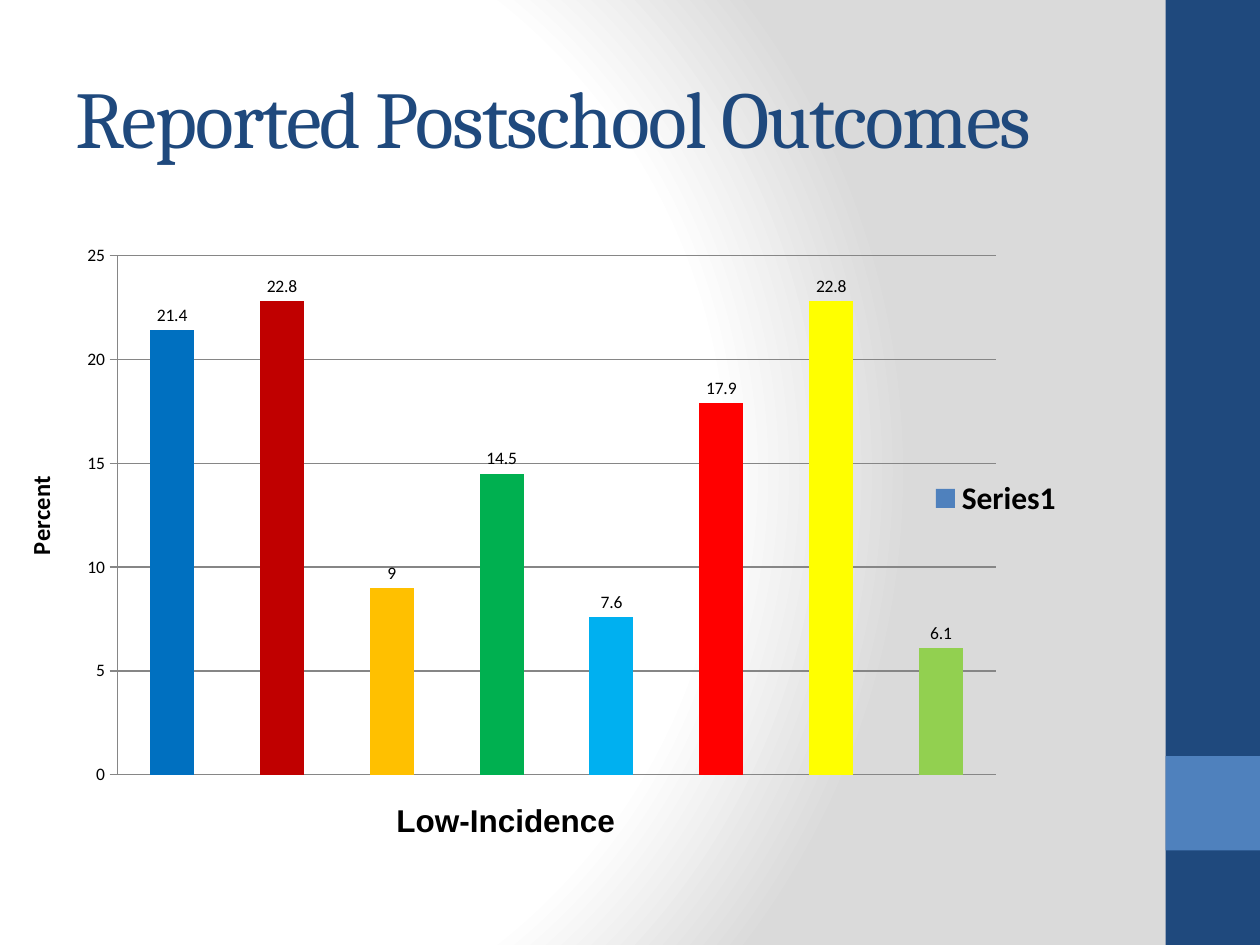
from lxml import etree
from pptx import Presentation
from pptx.chart.data import CategoryChartData
from pptx.dml.color import RGBColor
from pptx.enum.chart import XL_CHART_TYPE as ChartType, XL_LABEL_POSITION as LabelPosition
from pptx.enum.chart import XL_LEGEND_POSITION as LegendPosition, XL_TICK_MARK as TickMark
from pptx.enum.shapes import MSO_SHAPE
from pptx.enum.text import MSO_ANCHOR, PP_ALIGN
from pptx.oxml import parse_xml
from pptx.oxml.ns import nsdecls, qn
from pptx.util import Inches, Pt

COLORS = {"navy": "1F497D", "blue": "4F81BD", "black": "000000", "grid": "868686"}
OUTCOMES = [(21.4, "0070C0"), (22.8, "C00000"), (9, "FFC000"), (14.5, "00B050"),
            (7.6, "00B0F0"), (17.9, "FF0000"), (22.8, "FFFF00"), (6.1, "92D050")]


def style_font(font, color, **values):
    font.color.rgb = RGBColor.from_string(COLORS[color])
    for name, value in values.items():
        setattr(font, name, value)


def place_part(part, index, **fractions):
    """Give a chart part a manual layout in fractions of the chart area."""
    for old in part.findall(qn("c:layout")):
        part.remove(old)
    layout = parse_xml(f"<c:layout {nsdecls('c')}><c:manualLayout/></c:layout>")
    for tag, value in fractions.items():
        etree.SubElement(layout[0], qn(f"c:{tag}")).set("val", str(value))
    part.insert(index, layout)


deck = Presentation()
deck.slide_width, deck.slide_height = Inches(10), Inches(7.5)
page = deck.slides.add_slide(deck.slide_layouts[5])

# Background: circular gradient, white to grey
background = page.background.fill
background.gradient()
gradient = page.background._cSld.find(f".//{qn('a:gradFill')}")
stops = "".join(f'<a:gs pos="{position}"><a:srgbClr val="{color}"/></a:gs>'
                for position, color in [(0, "FFFFFF"), (75000, "FFFFFF"), (100000, "DADADA")])
gradient.getparent().replace(gradient, parse_xml(
    f'<a:gradFill {nsdecls("a")} rotWithShape="1"><a:gsLst>{stops}</a:gsLst>'
    '<a:path path="circle"><a:fillToRect l="20000" t="50000" r="100000" b="50000"/></a:path>'
    "</a:gradFill>"))

# Right-hand band and its accent square
for top, height, color in [(0, 7.5, "navy"), (6, 0.75, "blue")]:
    band = page.shapes.add_shape(MSO_SHAPE.RECTANGLE, Inches(9.25), Inches(top),
                                 Inches(0.75), Inches(height))
    band.shadow.inherit = False
    band.fill.solid()
    band.fill.fore_color.rgb = RGBColor.from_string(COLORS[color])
    band.line.fill.background()

# Title
title = page.shapes.title
title.left, title.top, title.width, title.height = map(Inches, (0.5, 0.3, 8.33, 1.25))
title.text_frame.vertical_anchor = MSO_ANCHOR.MIDDLE
para = title.text_frame.paragraphs[0]
para.alignment = PP_ALIGN.LEFT
span = para.add_run()
span.text = "Reported Postschool Outcomes"
style_font(span.font, "navy", name="Cambria", size=Pt(46))
span.font._element.set("spc", "-100")

# Column chart
data = CategoryChartData()
data.categories = [str(number) for number in range(1, len(OUTCOMES) + 1)]
data.add_series("Series1", [value for value, _ in OUTCOMES])
chart = page.shapes.add_chart(ChartType.COLUMN_CLUSTERED, Inches(0), Inches(1.85),
                              Inches(9.3), Inches(4.48), data).chart
chart.has_title = False
style_font(chart.font, "black", name="Calibri", size=Pt(10))
place_part(chart._chartSpace.chart.plotArea, 0, layoutTarget="inner", xMode="edge",
           yMode="edge", x=0.1, y=0.04, w=0.75, h=0.92)

plot = chart.plots[0]
plot.gap_width = 150
plot.vary_by_categories = False
series = plot.series[0]
series.format.fill.solid()
series.format.fill.fore_color.rgb = RGBColor.from_string(COLORS["blue"])
for index, (_, color) in enumerate(OUTCOMES):
    fill = series.points[index].format.fill
    fill.solid()
    fill.fore_color.rgb = RGBColor.from_string(color)
labels = series.data_labels
labels.show_value = True
labels.position = LabelPosition.OUTSIDE_END

# Axes
chart.category_axis.visible = False
axis = chart.value_axis
axis.minimum_scale, axis.maximum_scale, axis.major_unit = 0, 25, 5
axis.major_tick_mark = TickMark.OUTSIDE
axis.has_major_gridlines = True
for line in (axis.format.line, axis.major_gridlines.format.line):
    line.color.rgb = RGBColor.from_string(COLORS["grid"])
    line.width = Pt(0.75)
caption = axis.axis_title.text_frame
caption.text = "Percent"
caption._txBody.bodyPr.set("rot", "-5400000")
caption._txBody.bodyPr.set("vert", "horz")
style_font(caption.paragraphs[0].runs[0].font, "black", name="Calibri", size=Pt(14), bold=True)

# Legend
chart.has_legend = True
legend = chart.legend
legend.position = LegendPosition.RIGHT
legend.include_in_layout = False
style_font(legend.font, "black", name="Calibri", size=Pt(18), bold=True)
place_part(legend._element, 1, xMode="edge", yMode="edge", x=0.79, y=0.43, w=0.12, h=0.08)

# Group label under the chart
box = page.shapes.add_textbox(Inches(1.85), Inches(6.31), Inches(4.33), Inches(0.4))
box.text_frame.word_wrap = True
para = box.text_frame.paragraphs[0]
para.alignment = PP_ALIGN.CENTER
span = para.add_run()
span.text = "Low-Incidence"
style_font(span.font, "black", name="Arial", size=Pt(18), bold=True)

deck.save("out.pptx")
